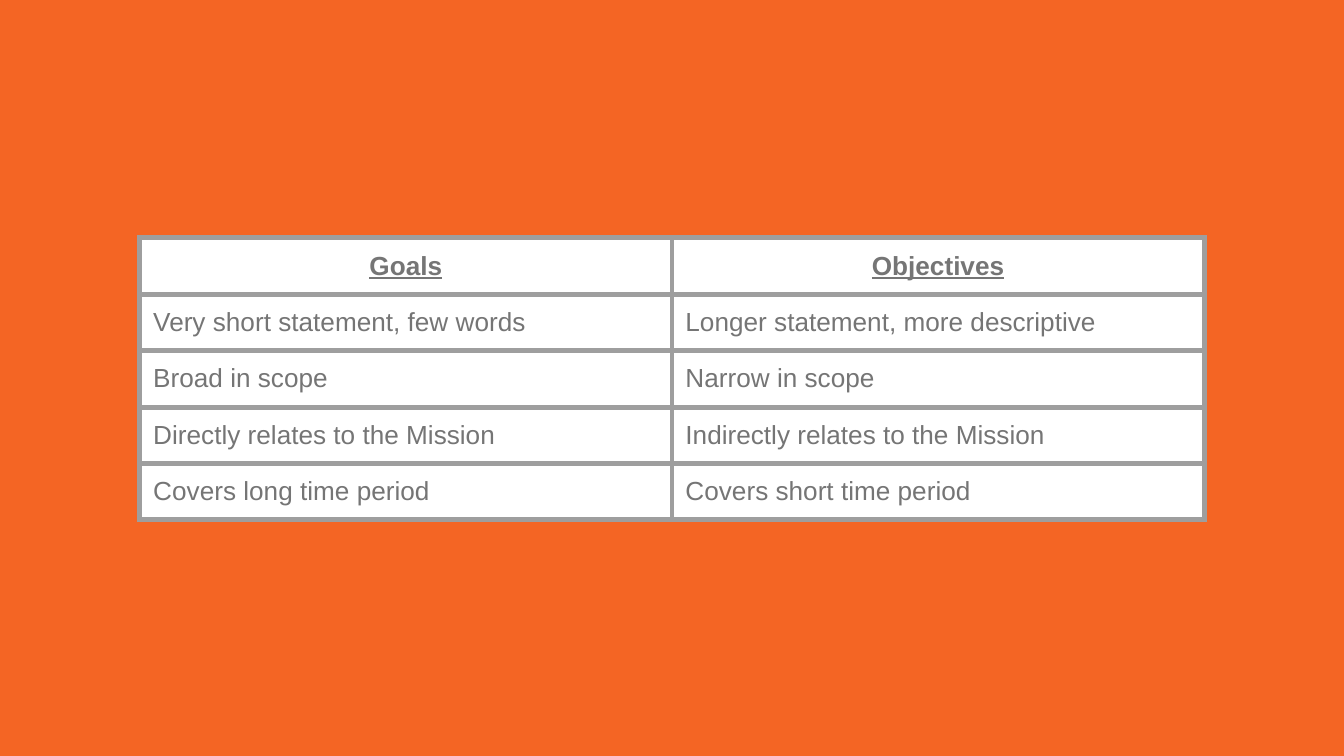
from dataclasses import dataclass

from lxml import etree
from pptx import Presentation
from pptx import util as u
from pptx.dml.color import RGBColor
from pptx.enum import text
from pptx.oxml import ns


@dataclass(frozen=True)
class Theme:
    background: str = "F46524"
    cell: str = "FFFFFF"
    border: str = "9E9E9E"
    ink: str = "757575"
    font: str = "Arial"
    size: int = 14
    border_width: int = 3


theme = Theme()
rows = [
    ("Goals", "Objectives"),
    ("Very short statement, few words", "Longer statement, more descriptive"),
    ("Broad in scope", "Narrow in scope"),
    ("Directly relates to the Mission", "Indirectly relates to the Mission"),
    ("Covers long time period", "Covers short time period"),
]
column_width, row_height, margin = u.Inches(3.96), u.Inches(0.42), u.Inches(0.1)


def add_borders(cell):
    """Draw all four sides; the lines must precede the fill in the cell's XML."""
    properties = cell._tc.get_or_add_tcPr()
    for position, side in enumerate(("a:lnL", "a:lnR", "a:lnT", "a:lnB")):
        line = etree.Element(ns.qn(side), w=str(u.Pt(theme.border_width)))
        fill = etree.SubElement(line, ns.qn("a:solidFill"))
        etree.SubElement(fill, ns.qn("a:srgbClr"), val=theme.border)
        properties.insert(position, line)


deck = Presentation()
deck.slide_width = u.Inches(10)
deck.slide_height = deck.slide_width * 9 // 16
page = deck.slides.add_slide(deck.slide_layouts[6])
page.background.fill.solid()
page.background.fill.fore_color.rgb = RGBColor.from_string(theme.background)

table = page.shapes.add_table(
    len(rows), 2, u.Inches(1.04), u.Inches(1.77),
    2 * column_width, len(rows) * row_height,
).table
for column in table.columns:
    column.width = column_width

for row_index, row in enumerate(rows):
    is_header = row_index == 0
    table.rows[row_index].height = row_height
    for column_index, wording in enumerate(row):
        cell = table.cell(row_index, column_index)
        cell.margin_left = cell.margin_right = margin
        cell.margin_top = cell.margin_bottom = margin
        cell.fill.solid()
        cell.fill.fore_color.rgb = RGBColor.from_string(theme.cell)
        add_borders(cell)

        cell.text = wording
        para = cell.text_frame.paragraphs[0]
        para.alignment = text.PP_ALIGN.CENTER if is_header else text.PP_ALIGN.LEFT
        para.font.name = theme.font
        para.font.size = u.Pt(theme.size)
        para.font.color.rgb = RGBColor.from_string(theme.ink)
        para.font.bold = is_header
        para.font.underline = is_header

deck.save("out.pptx")
